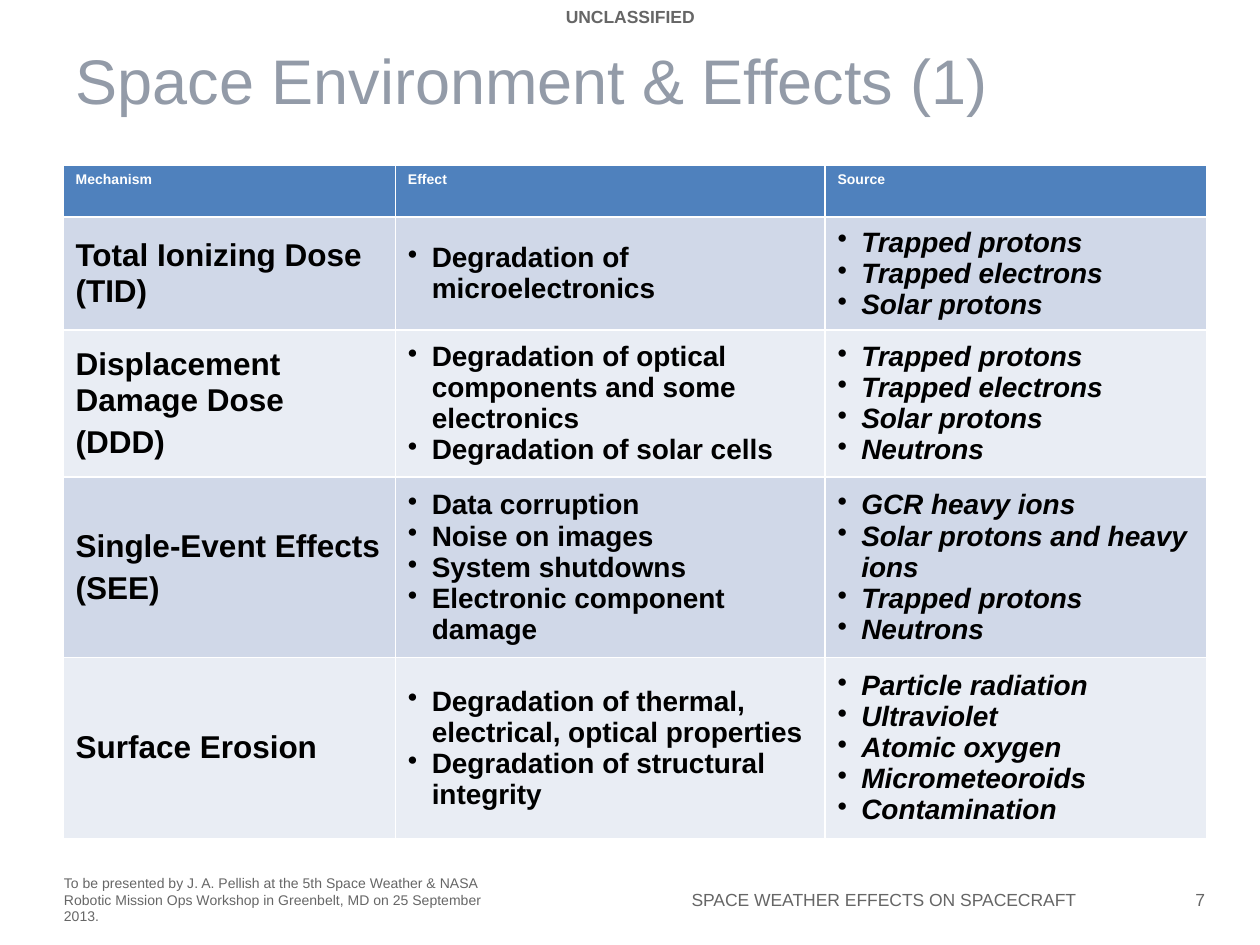
from pptx import Presentation
from pptx.dml.color import RGBColor
from pptx.enum.text import MSO_ANCHOR, MSO_AUTO_SIZE, PP_ALIGN
from pptx.oxml.ns import qn
from pptx.util import Cm, Pt
from lxml.etree import SubElement

FONT = "Arial"
COLORS = {
    "title": "939BA8",
    "note": "666666",
    "header": "4F81BD",
    "header_text": "FFFFFF",
    "body_text": "000000",
    "band_dark": "D0D8E8",
    "band_light": "E9EDF4",
}
HEADERS = ["Mechanism", "Effect", "Source"]
COLUMN_WIDTHS = [6.7, 8.66, 7.7]
HEADER_HEIGHT = 1.04
ROWS = [
    (2.13, 0, ["Total Ionizing Dose", "(TID)"],
     ["Degradation of microelectronics"],
     ["Trapped protons", "Trapped electrons", "Solar protons"]),
    (2.77, 4, ["Displacement Damage Dose", "(DDD)"],
     ["Degradation of optical components and some electronics",
      "Degradation of solar cells"],
     ["Trapped protons", "Trapped electrons", "Solar protons", "Neutrons"]),
    (3.39, 4, ["Single-Event Effects", "(SEE)"],
     ["Data corruption", "Noise on images", "System shutdowns",
      "Electronic component damage"],
     ["GCR heavy ions", "Solar protons and heavy ions", "Trapped protons",
      "Neutrons"]),
    (3.39, 4, ["Surface Erosion"],
     ["Degradation of thermal, electrical, optical properties",
      "Degradation of structural integrity"],
     ["Particle radiation", "Ultraviolet", "Atomic oxygen",
      "Micrometeoroids", "Contamination"]),
]


def format_runs(p, size, color, bold=False, italic=False):
    for r in p.runs:
        r.font.name = FONT
        r.font.size = Pt(size)
        r.font.bold = bold
        r.font.italic = italic
        r.font.color.rgb = RGBColor.from_string(COLORS[color])


def add_bullet(p):
    pPr = p._p.get_or_add_pPr()
    pPr.set("marL", str(Cm(0.48)))
    pPr.set("indent", str(-Cm(0.48)))
    SubElement(pPr, qn("a:buChar")).set("char", "•")


def add_title(s, text):
    sp = s.shapes.title
    sp.left, sp.top, sp.width, sp.height = Cm(1.27), Cm(0.43), Cm(23.06), Cm(2.34)
    tf = sp.text_frame
    tf.text = text
    tf.vertical_anchor = MSO_ANCHOR.MIDDLE
    p = tf.paragraphs[0]
    p.alignment = PP_ALIGN.LEFT
    format_runs(p, 36, "title")


def add_note(s, text, box, size=10, align=PP_ALIGN.LEFT,
             anchor=MSO_ANCHOR.TOP, bold=False, wrap=True):
    tf = s.shapes.add_textbox(*map(Cm, box)).text_frame
    tf.text = text
    tf.word_wrap = wrap
    tf.vertical_anchor = anchor
    if anchor == MSO_ANCHOR.TOP:
        tf.auto_size = MSO_AUTO_SIZE.SHAPE_TO_FIT_TEXT
    p = tf.paragraphs[0]
    p.alignment = align
    format_runs(p, size, "note", bold)


def fill_cell(cell, lines, fill, size, color="body_text", italic=False,
              bullets=False, gap=0, anchor=MSO_ANCHOR.MIDDLE):
    cell.fill.solid()
    cell.fill.fore_color.rgb = RGBColor.from_string(COLORS[fill])
    cell.vertical_anchor = anchor
    tf = cell.text_frame
    tf.text = "\n".join(lines)
    for i, p in enumerate(tf.paragraphs):
        if bullets:
            add_bullet(p)
        if gap and i:
            p.space_before = Pt(gap)
        format_runs(p, size, color, True, italic)


def add_effects_table(s):
    heights = [HEADER_HEIGHT] + [row[0] for row in ROWS]
    table = s.shapes.add_table(
        len(heights), len(HEADERS), Cm(1.27), Cm(3.33),
        Cm(sum(COLUMN_WIDTHS)), Cm(sum(heights))).table
    for column, width in zip(table.columns, COLUMN_WIDTHS):
        column.width = Cm(width)
    for row, height in zip(table.rows, heights):
        row.height = Cm(height)
    for c, header in enumerate(HEADERS):
        fill_cell(table.cell(0, c), [header], "header", 8, "header_text",
                  anchor=MSO_ANCHOR.TOP)
    for r, (_, gap, mechanism, effects, sources) in enumerate(ROWS, 1):
        band = "band_dark" if r % 2 else "band_light"
        fill_cell(table.cell(r, 0), mechanism, band, 18, gap=gap)
        fill_cell(table.cell(r, 1), effects, band, 16, bullets=True)
        fill_cell(table.cell(r, 2), sources, band, 16, italic=True, bullets=True)


def main():
    prs = Presentation()
    prs.slide_width, prs.slide_height = Cm(25.4), Cm(19.05)
    s = prs.slides.add_slide(prs.slide_layouts[5])
    add_note(s, "To be presented by J. A. Pellish at the 5th Space Weather & NASA "
             "Robotic Mission Ops Workshop in Greenbelt, MD on 25 September 2013.",
             (1.04, 17.5, 9.63, 1.27), size=8)
    add_title(s, "Space Environment & Effects (1)")
    add_effects_table(s)
    add_note(s, "7", (22.15, 17.65, 2.39, 0.97),
             align=PP_ALIGN.RIGHT, anchor=MSO_ANCHOR.MIDDLE)
    add_note(s, "SPACE WEATHER EFFECTS ON SPACECRAFT", (12.85, 17.63, 9.09, 0.99),
             align=PP_ALIGN.RIGHT, anchor=MSO_ANCHOR.MIDDLE)
    add_note(s, "UNCLASSIFIED", (11.13, 0, 3.15, 0.69),
             align=PP_ALIGN.CENTER, bold=True, wrap=False)
    prs.save("out.pptx")


if __name__ == "__main__":
    main()
